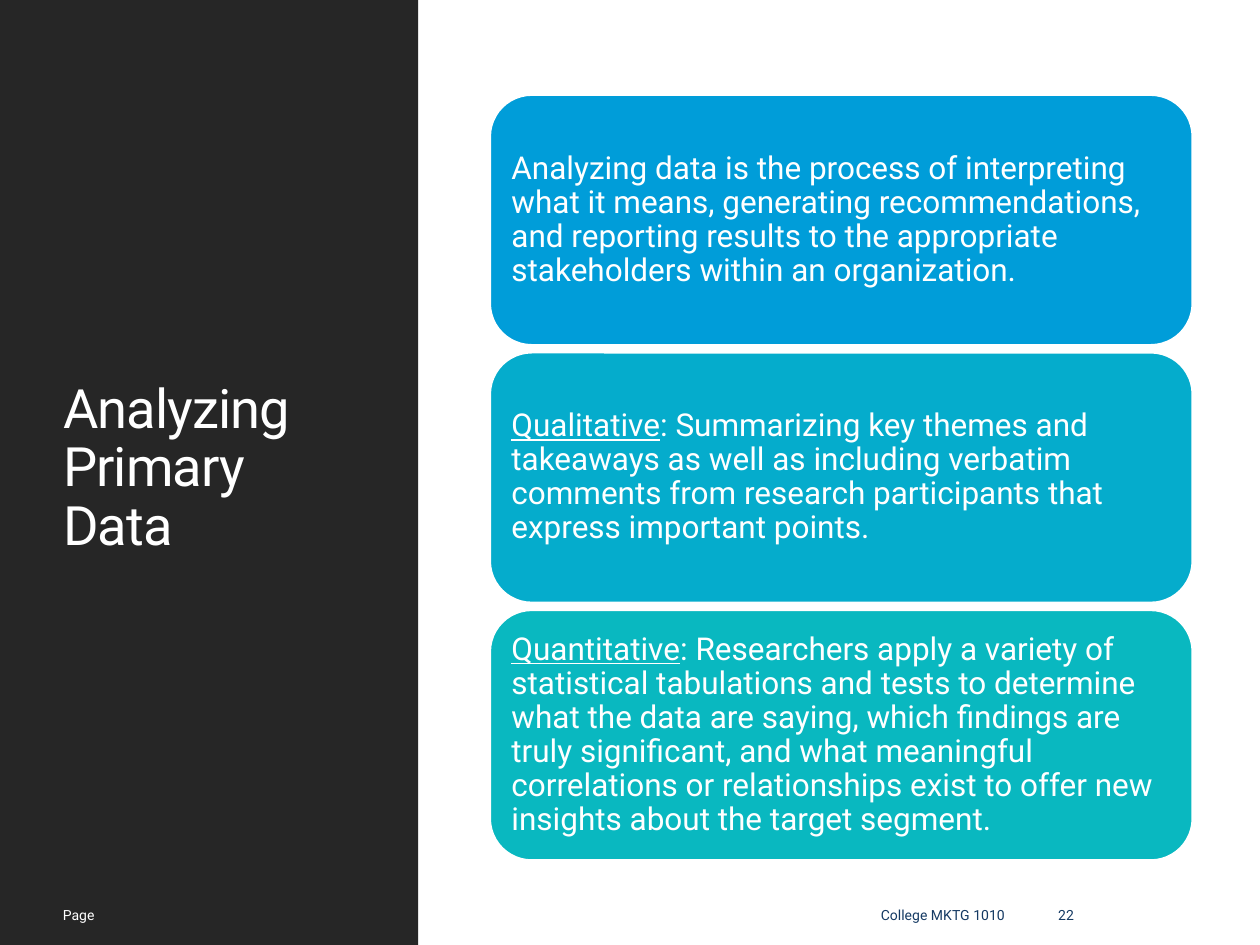
from dataclasses import dataclass

from pptx import Presentation
from pptx import util as u
from pptx.dml.color import RGBColor
from pptx.enum import shapes, text


@dataclass(frozen=True)
class Theme:
    font: str = "Roboto"
    white: str = "FFFFFF"
    dark: str = "262626"
    navy: str = "153A63"
    cards: tuple = ("009DD9", "05ACCC", "09B8C0")
    title_size: float = 31
    body_size: float = 18
    footer_size: float = 8


class SlideBuilder:
    """Holds the theme and the current slide."""

    def __init__(self, prs, theme):
        self.theme = theme
        self.s = prs.slides.add_slide(prs.slide_layouts[5])  # title only
        self.paint(self.s.background.fill, theme.white)

    @staticmethod
    def paint(fill, color):
        fill.solid()
        fill.fore_color.rgb = RGBColor.from_string(color)

    def format_text(self, tf, size, color, align=text.PP_ALIGN.LEFT):
        tf.word_wrap = True
        tf.auto_size = text.MSO_AUTO_SIZE.NONE
        tf.vertical_anchor = text.MSO_ANCHOR.MIDDLE
        for p in tf.paragraphs:
            p.alignment = align
            for r in p.runs:
                r.font.name = self.theme.font
                r.font.size = u.Pt(size)
                r.font.color.rgb = RGBColor.from_string(color)

    def shape(self, kind, box, color):
        sp = self.s.shapes.add_shape(kind, *map(u.Pt, box))
        sp.shadow.inherit = False
        self.paint(sp.fill, color)
        sp.line.fill.background()
        return sp

    def panel(self, box):
        sp = self.shape(shapes.MSO_SHAPE.RECTANGLE, box, self.theme.dark)
        # Keep the panel behind the title
        self.s.shapes.title._element.addprevious(sp._element)

    def title(self, words, box):
        sp = self.s.shapes.title
        sp.left, sp.top, sp.width, sp.height = map(u.Pt, box)
        tf = sp.text_frame
        tf.text = words
        self.format_text(tf, self.theme.title_size, self.theme.white)
        p = tf.paragraphs[0]
        p.line_spacing = 0.9
        p.runs[0]._r.get_or_add_rPr().set("spc", "-50")

    def card(self, term, words, box, color):
        sp = self.shape(shapes.MSO_SHAPE.ROUNDED_RECTANGLE, box, color)
        self.paint(sp.line.fill, self.theme.white)
        sp.line.width = u.Pt(1.25)
        tf = sp.text_frame
        tf.margin_left = tf.margin_right = u.Pt(5.3)
        tf.margin_top = tf.margin_bottom = u.Pt(5)
        p = tf.paragraphs[0]
        p.line_spacing = 0.9
        if term:
            r = p.add_run()
            r.text = term
            r.font.underline = True
        p.add_run().text = words
        self.format_text(tf, self.theme.body_size, self.theme.white)

    def footer(self, words, box, color, align=text.PP_ALIGN.LEFT):
        tf = self.s.shapes.add_textbox(*map(u.Pt, box)).text_frame
        tf.text = words
        tf.paragraphs[0].space_after = u.Pt(6)
        self.format_text(tf, self.theme.footer_size, color, align)


CARDS = [
    ("", "Analyzing data is the process of interpreting what it means, "
         "generating recommendations, and reporting results to the "
         "appropriate stakeholders within an organization."),
    ("Qualitative", ": Summarizing key themes and takeaways as well as "
                    "including verbatim comments from research participants "
                    "that express important points."),
    ("Quantitative", ": Researchers apply a variety of statistical "
                     "tabulations and tests to determine what the data are "
                     "saying, which findings are truly significant, and what "
                     "meaningful correlations or relationships exist to offer "
                     "new insights about the target segment."),
]


def main():
    prs = Presentation()
    prs.slide_width, prs.slide_height = u.Pt(720), u.Pt(540)
    theme = Theme()
    b = SlideBuilder(prs, theme)

    # Dark side panel with the title
    b.panel((0, 0, 239, 540))
    b.title("Analyzing Primary Data", (28.8, 41, 182, 454.5))

    # Stacked cards at an equal pitch
    left, top, width, height, gap = 280, 54.2, 401.5, 143, 4.2
    for i, ((term, words), color) in enumerate(zip(CARDS, theme.cards)):
        y = top + i * (height + gap)
        b.card(term, words, (left, y, width, height), color)

    # Footer row
    y, height = 508.5, 28.8
    b.footer("Page", (28.8, y, 102, height), theme.white)
    b.footer("College MKTG 1010", (left, y, 301.5, height), theme.navy,
             text.PP_ALIGN.RIGHT)
    b.footer("22", (597.6, y, 64, height), theme.navy)

    prs.save("out.pptx")


if __name__ == "__main__":
    main()
